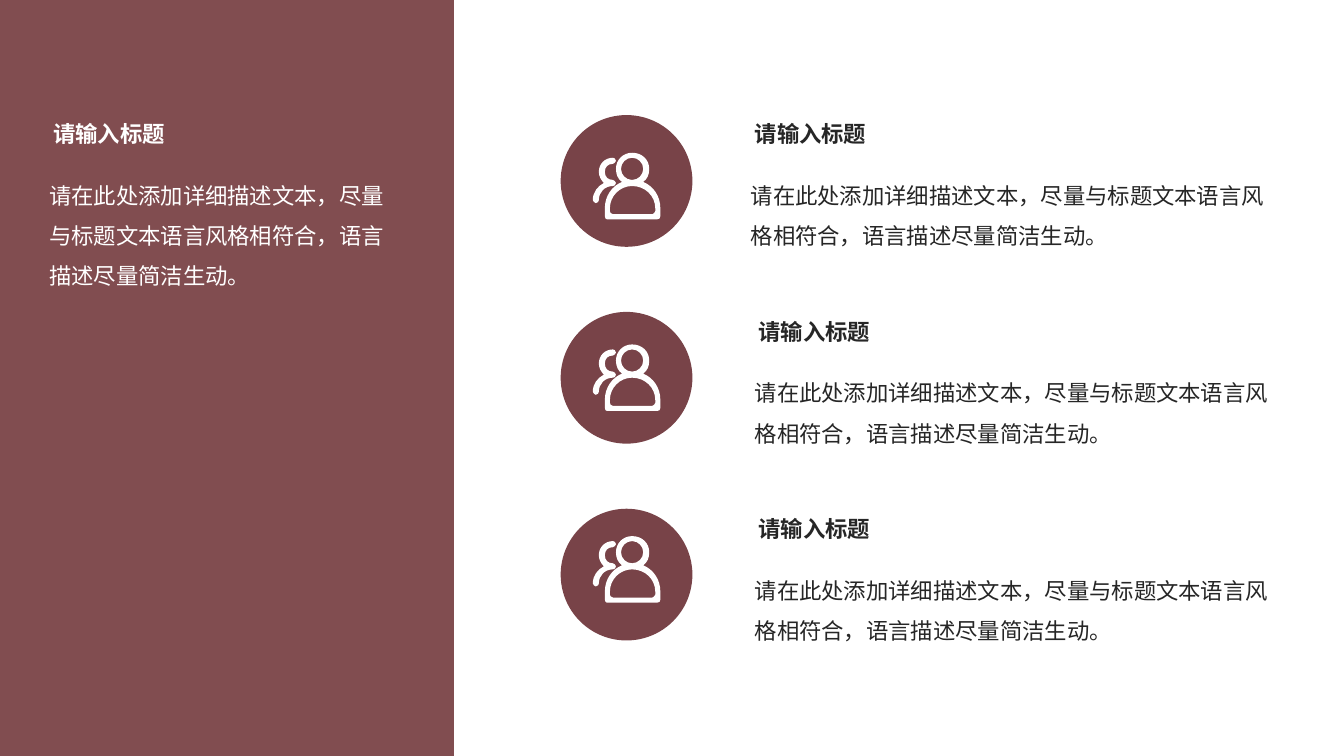
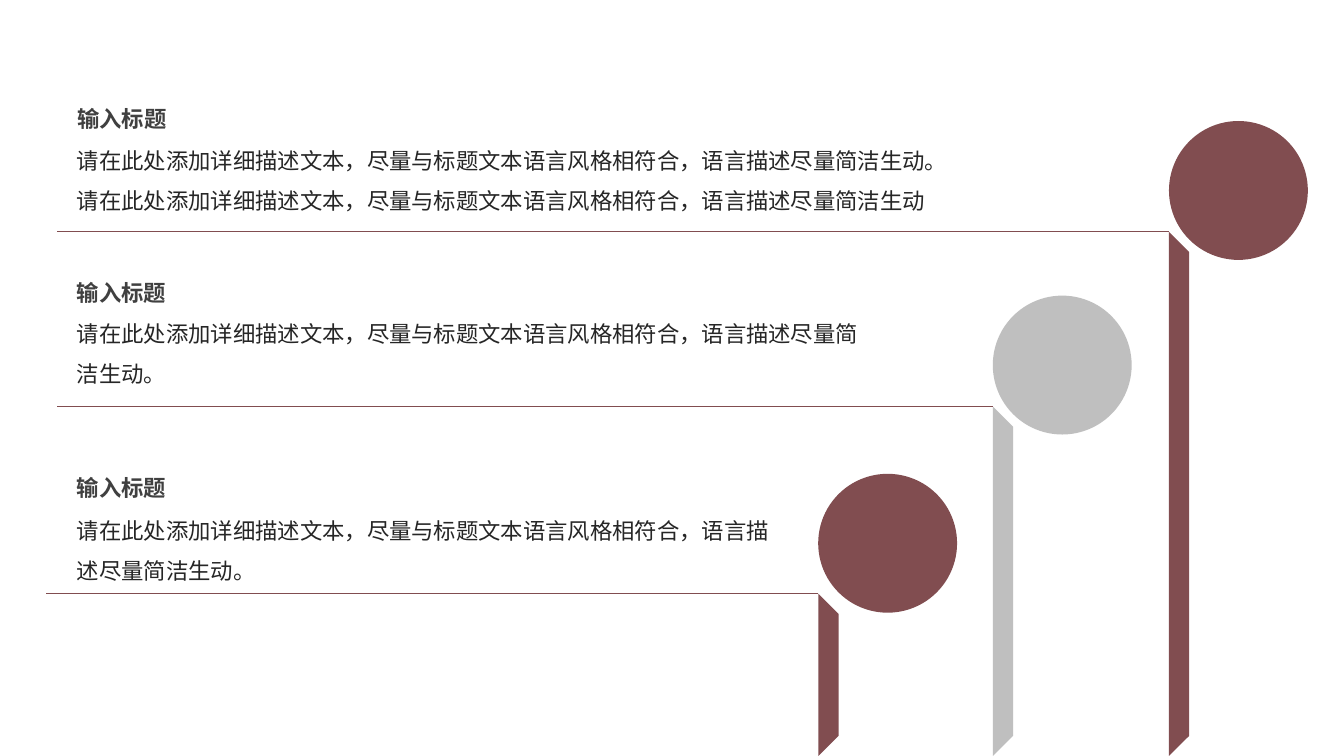
import math

from lxml import etree
from pptx import Presentation
from pptx.dml.color import RGBColor
from pptx.enum.shapes import MSO_CONNECTOR, MSO_SHAPE
from pptx.enum.text import MSO_ANCHOR, MSO_AUTO_SIZE, PP_ALIGN
from pptx.oxml.ns import qn
from pptx.util import Cm, Pt

RECTANGLE, OVAL, STRIPE = MSO_SHAPE.RECTANGLE, MSO_SHAPE.OVAL, MSO_SHAPE.DIAGONAL_STRIPE
STRAIGHT = MSO_CONNECTOR.STRAIGHT
LEFT = PP_ALIGN.LEFT
TITLE_ONLY = 5

COLORS = {
    "wine": "814D50",
    "dark_wine": "784348",
    "silver": "BFBFBF",
    "white": "FFFFFF",
    "ink": "262626",
    "slate": "404040",
}
FONT = "Noto Sans CJK SC"
FRAME_FORMAT = {
    "word_wrap": True,
    "auto_size": MSO_AUTO_SIZE.SHAPE_TO_FIT_TEXT,
    "vertical_anchor": MSO_ANCHOR.TOP,
}
SLIDE_WIDTH, SLIDE_HEIGHT = 33.87, 19.05

DETAIL = "请在此处添加详细描述文本，尽量与标题文本语言风格相符合，语言描述尽量简洁生动。"

# Outlines in hundredths of an inch: a start point, then steps of
# one point (a line) or three points (a Bezier curve).
ICON_UNIT = Pt(0.72)
PEOPLE_ICON = [
    ((50, 29), [
        ((54, 26), (56, 22), (56, 16)), ((56, 7), (49, 0), (39, 0)),
        ((30, 0), (23, 7), (23, 16)), ((23, 22), (25, 26), (29, 29)),
        ((19, 33), (12, 43), (12, 55)), ((12, 63),),
        ((12, 65), (13, 66), (14, 66)), ((64, 66),),
        ((66, 66), (67, 65), (67, 63)), ((67, 55),),
        ((67, 43), (60, 33), (50, 29)),
    ]),
    ((28, 16), [
        ((28, 10), (33, 5), (39, 5)), ((45, 5), (50, 10), (50, 16)),
        ((50, 22), (45, 27), (39, 27)), ((33, 27), (28, 22), (28, 16)),
    ]),
    ((62, 58), [
        ((62, 59), (60, 61), (59, 61)), ((20, 61),),
        ((18, 61), (17, 59), (17, 58)), ((17, 55),),
        ((17, 43), (27, 33), (39, 33)), ((52, 33), (62, 43), (62, 55)),
    ]),
    ((23, 30), [
        ((23, 29), (21, 27), (20, 27)), ((15, 27), (12, 24), (12, 19)),
        ((12, 14), (15, 11), (20, 11)), ((21, 11), (23, 9), (23, 8)),
        ((23, 6), (21, 5), (20, 5)), ((12, 5), (6, 11), (6, 19)),
        ((6, 23), (8, 27), (11, 30)), ((5, 33), (0, 39), (0, 47)),
        ((0, 48), (2, 50), (3, 50)), ((5, 50), (6, 48), (6, 47)),
        ((6, 39), (12, 33), (20, 33)), ((21, 33), (23, 32), (23, 30)),
    ]),
]


def rgb(color):
    return RGBColor.from_string(COLORS[color])


def paint(shape, color):
    shape.shadow.inherit = False
    shape.fill.solid()
    shape.fill.fore_color.rgb = rgb(color)
    shape.line.fill.background()


def add_solid(page, kind, left, top, width, height, color):
    shape = page.shapes.add_shape(kind, Cm(left), Cm(top), Cm(width), Cm(height))
    paint(shape, color)
    return shape


def add_rule(page, start, end, y):
    rule = page.shapes.add_connector(STRAIGHT, Cm(start), Cm(y), Cm(end), Cm(y))
    rule.line.color.rgb = rgb("wine")
    rule.line.width = Pt(0.5)
    etree.SubElement(rule._element.spPr, qn("a:effectLst"))


def add_pole(page, left, top, color, width=0.51):
    """Stand a bevelled pole on the slide's bottom edge.

    Turned by 135 degrees, the stripe's long edge becomes the pole's left side.
    """
    height = SLIDE_HEIGHT - top
    side = height / math.sqrt(2)
    middle = top + height / 2
    pole = add_solid(page, STRIPE, left - side / 2, middle - side / 2, side, side, color)
    pole.adjustments[0] = 1 - 2 * width / height
    pole.rotation = 135


def bend(segment, points):
    """Turn a straight path segment into a Bezier curve."""
    segment.tag = qn("a:cubicBezTo")
    for old_point in list(segment):
        segment.remove(old_point)
    for x, y in points:
        etree.SubElement(segment, qn("a:pt"), x=str(x), y=str(y))


def add_people_icon(page, left, top):
    builder = page.shapes.build_freeform(*PEOPLE_ICON[0][0], scale=ICON_UNIT)
    for index, (start, steps) in enumerate(PEOPLE_ICON):
        if index:
            builder.move_to(*start)
        builder.add_line_segments([step[-1] for step in steps])
    icon = builder.convert_to_shape(Cm(left), Cm(top))
    paint(icon, "white")
    all_steps = [step for _, steps in PEOPLE_ICON for step in steps]
    segments = list(icon._element.iter(qn("a:lnTo")))
    for segment, step in zip(segments, all_steps):
        if len(step) == 3:
            bend(segment, step)


def write(box, lines, color, bold, spacing):
    frame = box.text_frame
    for name, value in FRAME_FORMAT.items():
        setattr(frame, name, value)
    span_format = {"name": FONT, "size": Pt(16), "bold": bold}
    for index, line in enumerate(lines):
        para = frame.add_paragraph() if index else frame.paragraphs[0]
        para.alignment = LEFT
        para.line_spacing = spacing
        span = para.add_run()
        span.text = line
        for name, value in span_format.items():
            setattr(span.font, name, value)
        span.font.color.rgb = rgb(color)
        etree.SubElement(span.font._element, qn("a:ea"), typeface=FONT)


def add_heading(page, text, left, top, width, color, is_title=False):
    """Add a bold heading; the title heading fills the title placeholder."""
    if is_title:
        box = page.shapes.title
        page.shapes._spTree.append(box._element)  # bring to front
        place = {"left": left, "top": top, "width": width, "height": 0.94}
        for name, value in place.items():
            setattr(box, name, Cm(value))
    else:
        box = page.shapes.add_textbox(Cm(left), Cm(top), Cm(width), Cm(0.94))
    write(box, [text], color, True, 1.0)


def add_detail(page, lines, left, top, width, height=2.18, color="ink"):
    box = page.shapes.add_textbox(Cm(left), Cm(top), Cm(width), Cm(height))
    write(box, lines, color, False, 1.5)


def add_page(deck):
    return deck.slides.add_slide(deck.slide_layouts[TITLE_ONLY])


def build_panel_page(deck):
    page = add_page(deck)
    heading, heading_width, first_top = "请输入标题", 4.39, 2.9
    detail_drop, ball_size = 1.22, 3.32

    add_solid(page, RECTANGLE, 0, 0, 11.44, SLIDE_HEIGHT, "wine")
    add_heading(page, heading, 1.09, first_top, heading_width, "white", is_title=True)
    add_detail(page, [DETAIL], 0.99, first_top + detail_drop, 9.47, 3.23, "white")

    for index, left in enumerate((18.67, 18.77, 18.77)):
        text_top = first_top + index * 4.98
        add_solid(page, OVAL, 14.13, first_top + index * 4.96, ball_size, ball_size, "dark_wine")
        add_people_icon(page, 14.94, 3.85 + index * 4.83)
        add_heading(page, heading, left + 0.1, text_top, heading_width, "ink")
        add_detail(page, [DETAIL], left, text_top + detail_drop, 13.61)


def build_steps_page(deck):
    page = add_page(deck)
    text_left, ball_size = 1.69, 3.5
    # color, pole left, ball top, rule start, rule y, heading top, detail top, width, lines
    steps = [
        ("wine", 29.46, 3.05, 1.44, 5.84, 2.52, 3.25, 23.24, [DETAIL, DETAIL.rstrip("。")]),
        ("silver", 25.02, 7.45, 1.44, 10.24, 6.91, 7.6, 20.57, [DETAIL]),
        ("wine", 20.62, 11.94, 1.17, 14.96, 11.83, 12.57, 18.08, [DETAIL]),
    ]
    for index, step in enumerate(steps):
        color, pole_left, ball_top, rule_start, rule_y, heading_top, detail_top, width, lines = step
        add_solid(page, OVAL, pole_left, ball_top, ball_size, ball_size, color)
        add_pole(page, pole_left, rule_y, color)
        add_rule(page, rule_start, pole_left, rule_y)
        add_heading(page, "输入标题", text_left, heading_top, 2.87, "slate", is_title=index == 0)
        add_detail(page, lines, text_left, detail_top, width)


def main():
    deck = Presentation()
    deck.slide_width, deck.slide_height = Cm(SLIDE_WIDTH), Cm(SLIDE_HEIGHT)
    build_panel_page(deck)
    build_steps_page(deck)
    deck.save("out.pptx")


if __name__ == "__main__":
    main()
